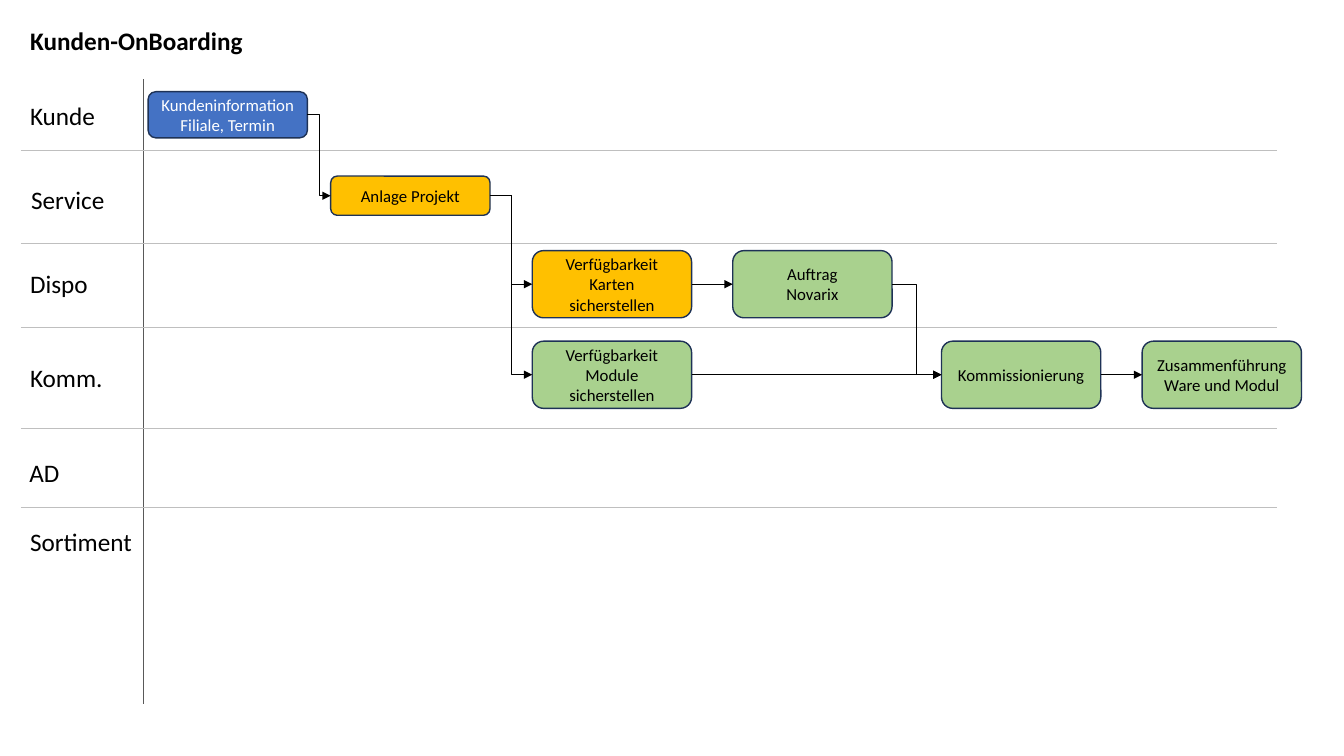
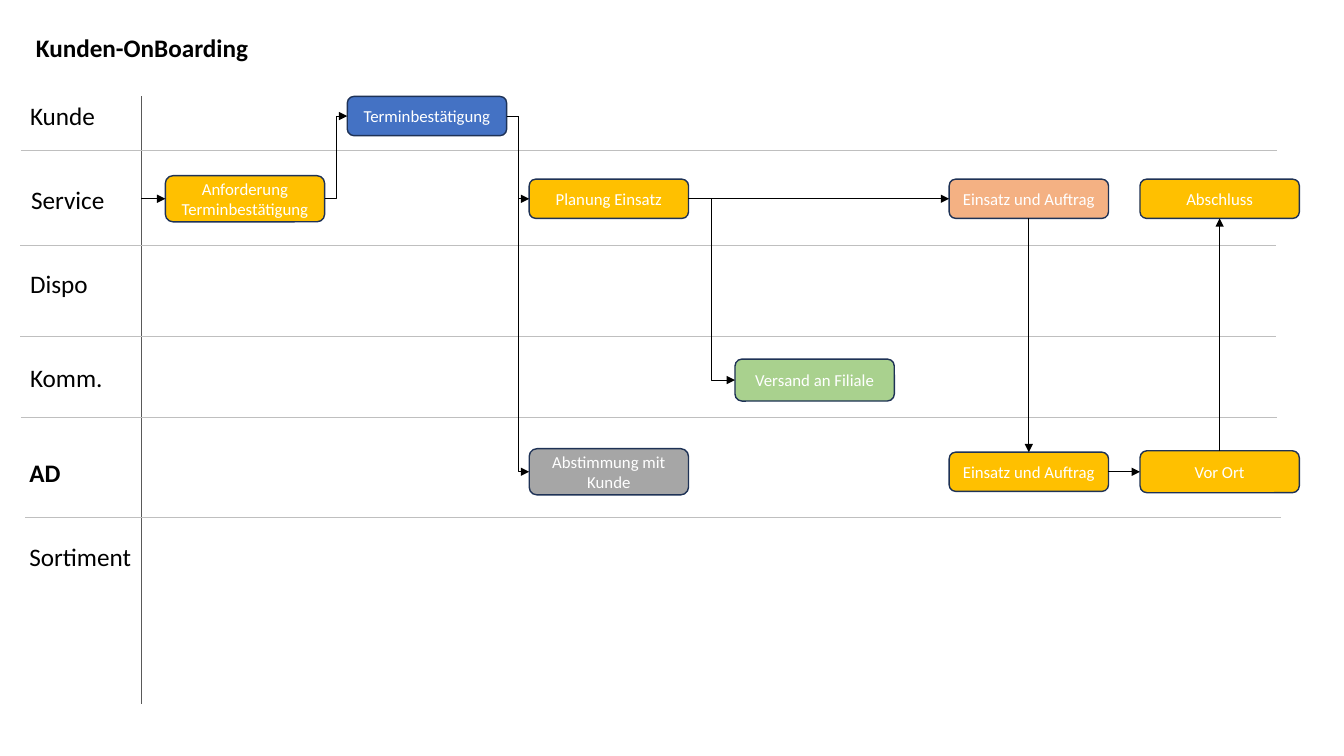
from dataclasses import dataclass

from lxml import etree
from pptx import Presentation
from pptx import util as u
from pptx.dml.color import RGBColor
from pptx.enum import shapes, text
from pptx.oxml import ns

Pt = u.Pt


# Shared look
@dataclass(frozen=True)
class Theme:
    font: str = "Calibri"
    heading_size: float = 18
    box_size: float = 12
    thin: float = 0.5
    outline_width: float = 1
    black: str = "000000"
    white: str = "FFFFFF"
    outline: str = "1E3256"
    axis: str = "595959"
    rule: str = "BFBFBF"
    blue: str = "4472C4"
    amber: str = "FFC000"
    green: str = "A9D18E"
    gray: str = "A6A6A6"
    peach: str = "F4B183"


THEME = Theme()
SLIDE_SIZE = (960, 540)
TITLE_SIZE = (168, 28.8)
LABEL_SIZE = (90, 28.8)
BOX_WIDTH = 113.8
ONE_LINE, TWO_LINES, THREE_LINES = 28, 33, 48  # box heights that hold their text
RULE_LENGTH = 897
AXIS_BOTTOM = 502.6
LABELS = {
    "Kunde": (14.4, 68.4),
    "Service": (15.1, 128.2),
    "Dispo": (14.4, 187.9),
    "Komm.": (14.4, 255.6),
    "AD": (13.9, 323.3),
}
TOP, LEFT, BOTTOM, RIGHT = range(4)  # connection sites of a box

# Content: lanes give the middle height of their boxes;
# boxes are key: (text, lane, left, height, fill, text colour)
PAGES = [
    {
        "title": ("Kunden-OnBoarding", 14.4, 14.4),
        "axis": (102.6, 56.5),
        "rules": [(15, 107.3), (15, 173.7), (15, 233.6), (15, 306.2), (15, 362.4)],
        "sortiment": (14.4, 372.2),
        "bold": (),
        "lanes": {"Kunde": 82, "Service": 139.8, "Dispo": 203, "Komm.": 267.7},
        "boxes": {
            "info": ("Kundeninformation\nFiliale, Termin", "Kunde", 105.8, TWO_LINES, THEME.blue, THEME.white),
            "project": ("Anlage Projekt", "Service", 236.2, ONE_LINE, THEME.amber, THEME.black),
            "cards": ("Verfügbarkeit Karten sicherstellen", "Dispo", 380.2, THREE_LINES, THEME.amber, THEME.black),
            "modules": ("Verfügbarkeit Module sicherstellen", "Komm.", 380.2, THREE_LINES, THEME.green, THEME.black),
            "order": ("Auftrag\nNovarix", "Dispo", 523.4, THREE_LINES, THEME.green, THEME.black),
            "picking": ("Kommissionierung", "Komm.", 672.5, THREE_LINES, THEME.green, THEME.black),
            "merge": ("Zusammenführung\nWare und Modul", "Komm.", 815.8, THREE_LINES, THEME.green, THEME.black),
        },
        "entry": None,
        "flows": [
            ("info", "project"), ("project", "cards"), ("project", "modules"),
            ("cards", "order"), ("order", "picking"), ("modules", "picking"),
            ("picking", "merge"),
        ],
    },
    {
        "title": ("Kunden-OnBoarding", 18.4, 19.4),
        "axis": (101, 68.6),
        "rules": [(15, 107.3), (14.5, 175.2), (14.5, 240), (15, 298.1), (18.2, 369.7)],
        "sortiment": (13.9, 383),
        "bold": ("AD",),
        "lanes": {"Kunde": 82.9, "Service": 142, "Komm.": 271.5, "AD": 337},
        "boxes": {
            "request": ("Anforderung Terminbestätigung", "Service", 118.1, TWO_LINES, THEME.amber, THEME.white),
            "confirm": ("Terminbestätigung", "Kunde", 248.1, ONE_LINE, THEME.blue, THEME.white),
            "plan": ("Planung Einsatz", "Service", 378, ONE_LINE, THEME.amber, THEME.white),
            "agree": ("Abstimmung mit Kunde", "AD", 378, TWO_LINES, THEME.gray, THEME.white),
            "ship": ("Versand an Filiale", "Komm.", 525, 30, THEME.green, THEME.white),
            "service": ("Einsatz und Auftrag", "Service", 678, ONE_LINE, THEME.peach, THEME.white),
            "field": ("Einsatz und Auftrag", "AD", 678, ONE_LINE, THEME.amber, THEME.white),
            "onsite": ("Vor Ort", "AD", 814.3, 30, THEME.amber, THEME.white),
            "done": ("Abschluss", "Service", 814.3, ONE_LINE, THEME.amber, THEME.white),
        },
        "entry": "request",
        "flows": [
            ("request", "confirm"), ("confirm", "plan"), ("confirm", "agree"),
            ("plan", "ship"), ("plan", "service"), ("service", "field"),
            ("field", "onsite"), ("onsite", "done"),
        ],
    },
]


def write(shape, words, size=THEME.heading_size, color=THEME.black, bold=False,
          align=text.PP_ALIGN.LEFT, anchor=text.MSO_ANCHOR.TOP, inset=3.6):
    frame = shape.text_frame
    frame.text = words
    frame.word_wrap = True
    frame.auto_size = text.MSO_AUTO_SIZE.NONE
    frame.vertical_anchor = anchor
    frame.margin_top = frame.margin_bottom = Pt(inset)
    for para in frame.paragraphs:
        para.alignment = align
        para.font.name = THEME.font
        para.font.size = Pt(size)
        para.font.bold = bold
        para.font.color.rgb = RGBColor.from_string(color)


def add_line(page, start, end, color, kind=shapes.MSO_CONNECTOR.STRAIGHT, arrow=False):
    line = page.shapes.add_connector(kind, *(Pt(v) for v in (*start, *end)))
    line.line.color.rgb = RGBColor.from_string(color)
    line.line.width = Pt(THEME.thin)
    if arrow:
        etree.SubElement(line.line._get_or_add_ln(), ns.qn("a:tailEnd"), type="triangle")
    etree.SubElement(line._element.spPr, ns.qn("a:effectLst"))
    return line


def add_box(page, lanes, words, lane, left, height, fill, color):
    box = page.shapes.add_shape(
        shapes.MSO_SHAPE.ROUNDED_RECTANGLE, Pt(left), Pt(lanes[lane] - height / 2),
        Pt(BOX_WIDTH), Pt(height))
    box.shadow.inherit = False
    box.fill.solid()
    box.fill.fore_color.rgb = RGBColor.from_string(fill)
    box.line.color.rgb = RGBColor.from_string(THEME.outline)
    box.line.width = Pt(THEME.outline_width)
    write(box, words, size=THEME.box_size, color=color, inset=0,
          align=text.PP_ALIGN.CENTER, anchor=text.MSO_ANCHOR.MIDDLE)
    return box


def add_flow(page, specs, boxes, lanes, source, target):
    """Join two boxes: straight within a lane or column, bent otherwise."""
    _, source_lane, source_left, *_ = specs[source]
    _, target_lane, target_left, *_ = specs[target]
    start_y, end_y = lanes[source_lane], lanes[target_lane]
    kind = shapes.MSO_CONNECTOR.STRAIGHT
    sites = (RIGHT, LEFT)
    if source_left == target_left:
        sites = (BOTTOM, TOP) if start_y < end_y else (TOP, BOTTOM)
    elif source_lane != target_lane:
        kind = shapes.MSO_CONNECTOR.ELBOW
    line = add_line(page, (source_left + BOX_WIDTH, start_y), (target_left, end_y),
                    THEME.black, kind, arrow=True)
    line.begin_connect(boxes[source], sites[0])
    line.end_connect(boxes[target], sites[1])


def build_page(deck, content):
    page = deck.slides.add_slide(deck.slide_layouts[5])
    lanes, specs = content["lanes"], content["boxes"]

    # Title
    words, left, top = content["title"]
    title = page.shapes.title
    title.left, title.top = Pt(left), Pt(top)
    title.width, title.height = (Pt(v) for v in TITLE_SIZE)
    write(title, words, bold=True)

    # Lane grid and labels
    axis_x, axis_top = content["axis"]
    add_line(page, (axis_x, axis_top), (axis_x, AXIS_BOTTOM), THEME.axis)
    for left, y in content["rules"]:
        add_line(page, (left, y), (left + RULE_LENGTH, y), THEME.rule)
    for name, place in {**LABELS, "Sortiment": content["sortiment"]}.items():
        label = page.shapes.add_textbox(*(Pt(v) for v in (*place, *LABEL_SIZE)))
        write(label, name, bold=name in content["bold"])

    # Steps and arrows
    boxes = {key: add_box(page, lanes, *spec) for key, spec in specs.items()}
    if content["entry"]:
        _, lane, left, *_ = specs[content["entry"]]
        entry = add_line(page, (axis_x, lanes[lane]), (left, lanes[lane]), THEME.black, arrow=True)
        entry.end_connect(boxes[content["entry"]], LEFT)
    for source, target in content["flows"]:
        add_flow(page, specs, boxes, lanes, source, target)


def main():
    deck = Presentation()
    deck.slide_width, deck.slide_height = (Pt(v) for v in SLIDE_SIZE)
    for content in PAGES:
        build_page(deck, content)
    deck.save("out.pptx")


if __name__ == "__main__":
    main()
